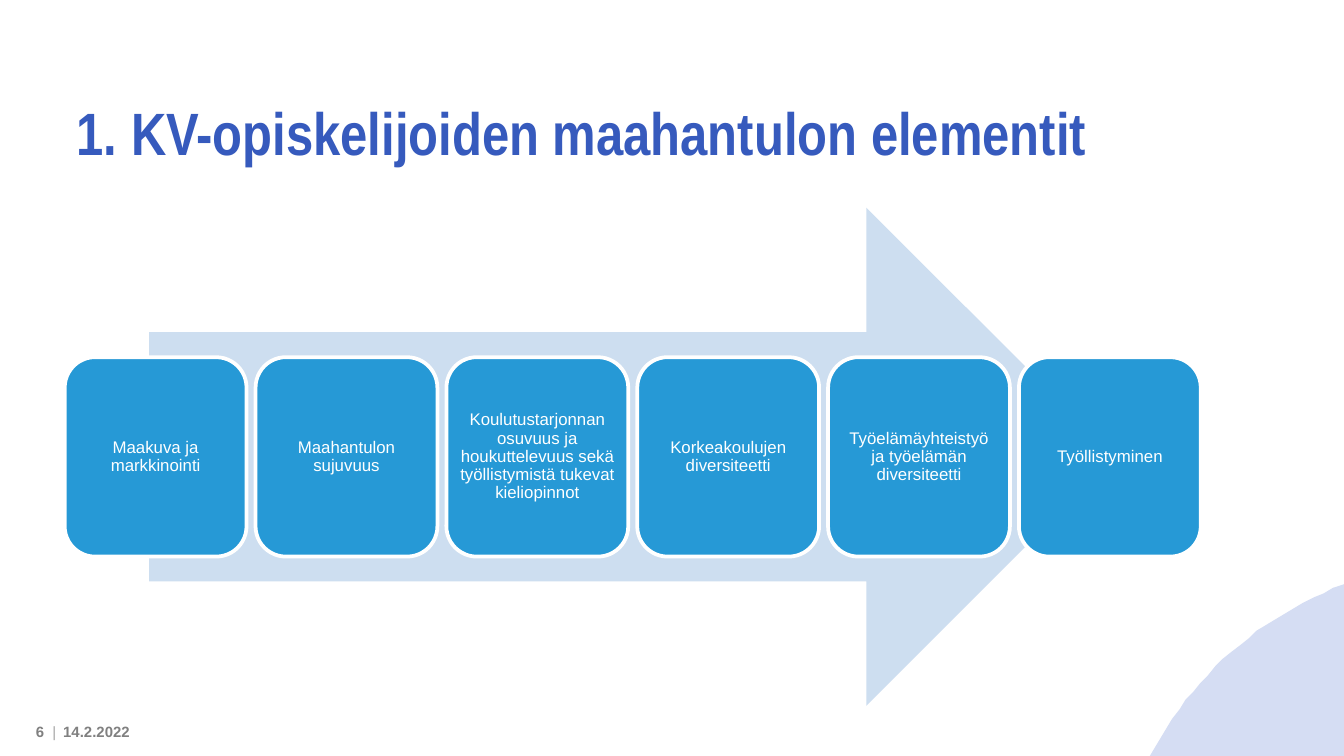
"""Build the slide on the stages of international students' arrival."""
from dataclasses import dataclass
from math import acos, asin, cos, sin

from pptx import Presentation
from pptx.dml.color import RGBColor
from pptx.enum.shapes import MSO_SHAPE as Preset
from pptx.enum.text import MSO_ANCHOR as Anchor, MSO_AUTO_SIZE as AutoSize, PP_ALIGN as Align
from pptx.util import Pt


@dataclass(frozen=True)
class Theme:
    title: str = "365ABD"
    stage: str = "2699D6"
    arrow: str = "CDDEF0"
    corner: str = "D5DDF3"
    white: str = "FFFFFF"
    footer: str = "808080"
    divider: str = "A6A6A6"
    title_size: int = 32
    stage_size: int = 9
    footer_size: int = 8
    title_font: str = "Arial Narrow"
    body_font: str = "Arial"


def paint(shape, fill, outline=None):
    shape.shadow.inherit = False
    shape.fill.solid()
    shape.fill.fore_color.rgb = RGBColor.from_string(fill)
    if outline:
        shape.line.color.rgb = RGBColor.from_string(outline)
        shape.line.width = Pt(2)
    else:
        shape.line.fill.background()


def write(shape, runs, font, size, align, anchor, insets, spacing=1.0):
    frame = shape.text_frame
    left, top, right, bottom = map(Pt, insets)
    frame_format = {
        "word_wrap": True, "auto_size": AutoSize.NONE, "vertical_anchor": anchor,
        "margin_left": left, "margin_top": top,
        "margin_right": right, "margin_bottom": bottom,
    }
    for name, value in frame_format.items():
        setattr(frame, name, value)
    line = frame.paragraphs[0]
    line.alignment, line.line_spacing = align, spacing
    for words, color, bold in runs:
        run = line.add_run()
        run.text = words
        for name, value in {"name": font, "size": Pt(size), "bold": bold}.items():
            setattr(run.font, name, value)
        run.font.color.rgb = RGBColor.from_string(color)


theme = Theme()
WIDTH, HEIGHT = 720, 405
deck = Presentation()
deck.slide_width, deck.slide_height = Pt(WIDTH), Pt(HEIGHT)
slide = deck.slides.add_slide(deck.slide_layouts[5])
shapes = slide.shapes

CENTER_X, CENTER_Y, RADIUS, STEPS = 785.3, 491.4, 189.7, 24
first = asin((CENTER_Y - HEIGHT) / RADIUS)
last = acos((CENTER_X - WIDTH) / RADIUS)
angles = [first + (last - first) * step / STEPS for step in range(STEPS + 1)]
arc = [(CENTER_X - RADIUS * cos(a), CENTER_Y - RADIUS * sin(a)) for a in angles]
outline = shapes.build_freeform(WIDTH, HEIGHT, scale=Pt(1))
outline.add_line_segments(arc, close=True)
paint(outline.convert_to_shape(), theme.corner)

heading = shapes.title
place = {"left": 33.84, "top": 16.56, "width": 609.12, "height": 77.04}
for name, value in place.items():
    setattr(heading, name, Pt(value))
write(heading, [("1. KV-opiskelijoiden maahantulon elementit", theme.title, True)],
      theme.title_font, theme.title_size, Align.LEFT, Anchor.BOTTOM, (7.2, 3.6, 7.2, 3.6))

progress = shapes.add_shape(Preset.RIGHT_ARROW, Pt(79.92), Pt(111.2), Pt(517.68), Pt(267))
paint(progress, theme.arrow)

stages = [
    "Maakuva ja markkinointi",
    "Maahantulon sujuvuus",
    "Koulutustarjonnan osuvuus ja houkuttelevuus sekä työllistymistä tukevat kieliopinnot",
    "Korkeakoulujen diversiteetti",
    "Työelämäyhteistyö ja työelämän diversiteetti",
    "Työllistyminen",
]
STAGE_LEFT, STAGE_PITCH = 34.7, 102.24
for index, label in enumerate(stages):
    stage = shapes.add_shape(Preset.ROUNDED_RECTANGLE, Pt(STAGE_LEFT + index * STAGE_PITCH),
                             Pt(191.4), Pt(97.4), Pt(106.8))
    paint(stage, theme.stage, theme.white)
    write(stage, [(label, theme.white, False)], theme.body_font, theme.stage_size,
          Align.CENTER, Anchor.MIDDLE, (2.7,) * 4, 0.9)

FOOTER_TOP, FOOTER_HEIGHT = 383.8, 15.84
footers = [
    (33.84, 54, Align.LEFT, (0, 0, 0, 0), [("14.2.2022", theme.footer, True)]),
    (0, 31.68, Align.RIGHT, (7.2, 3.6, 1.44, 3.6),
     [("6  ", theme.footer, True), ("|", theme.divider, False)]),
]
for left, width, align, insets, runs in footers:
    footer = shapes.add_textbox(Pt(left), Pt(FOOTER_TOP), Pt(width), Pt(FOOTER_HEIGHT))
    write(footer, runs, theme.body_font, theme.footer_size, align, Anchor.MIDDLE, insets)

deck.save("out.pptx")
